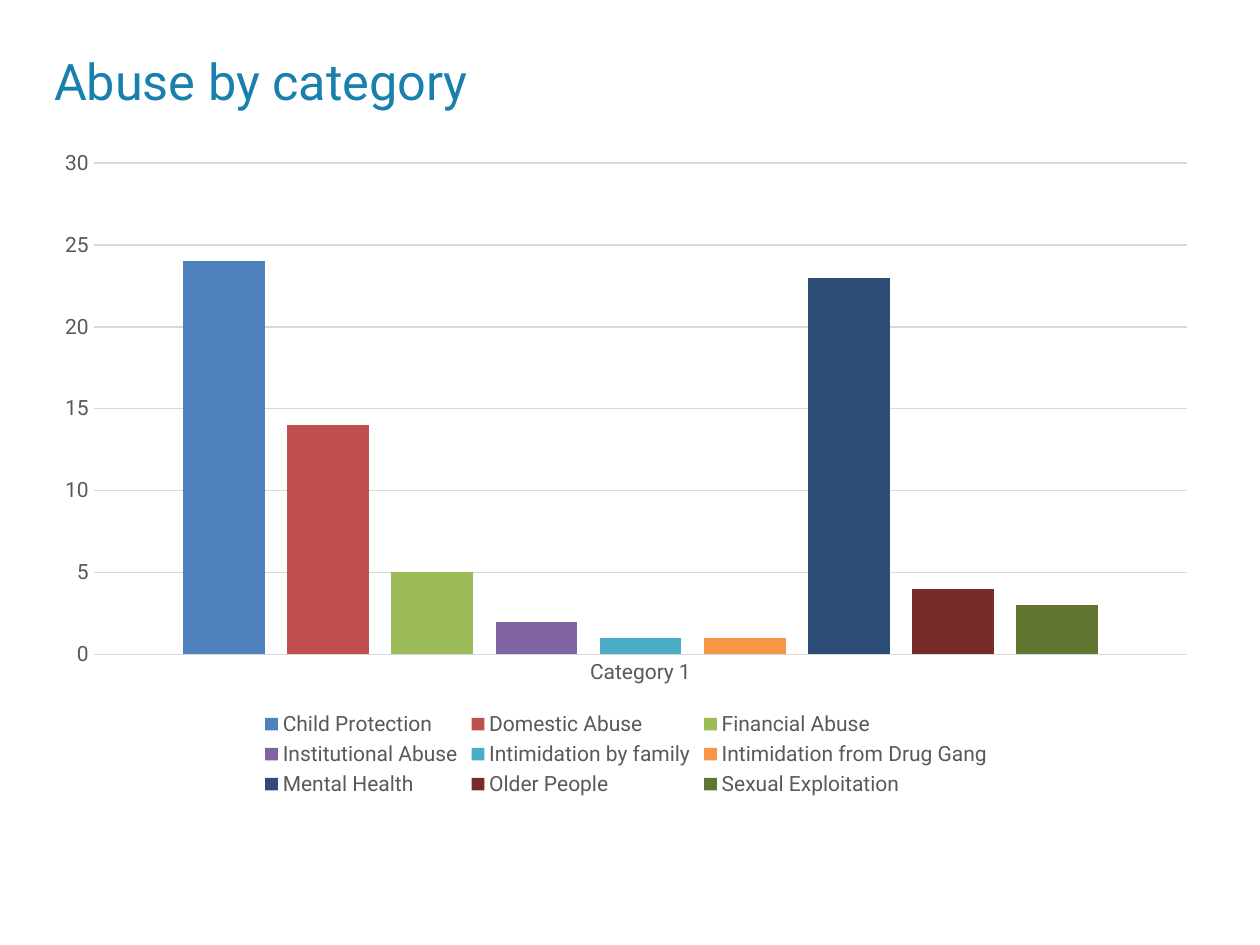
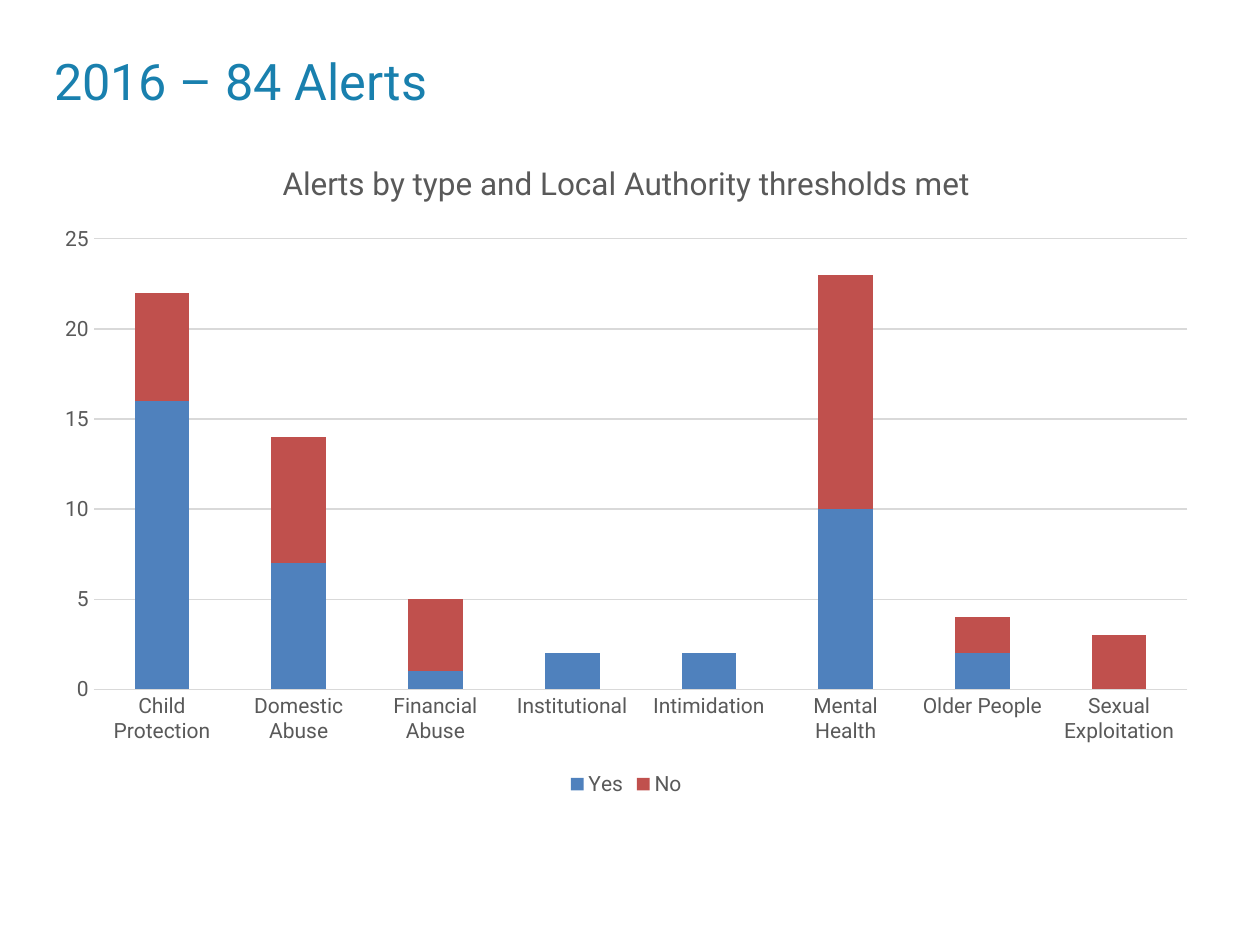
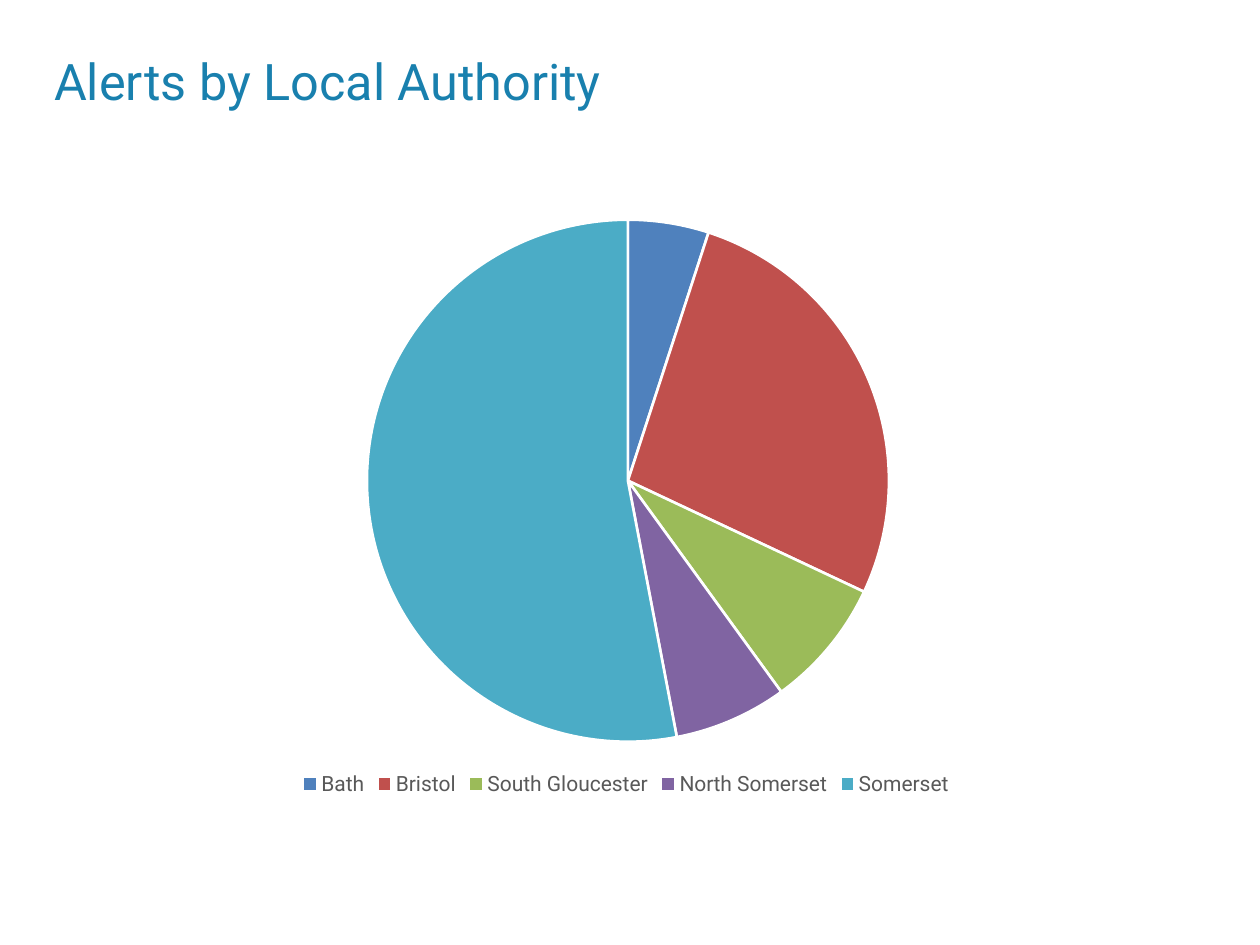
from dataclasses import dataclass

import lxml.etree
import pptx
import pptx.chart.data
import pptx.dml.color
import pptx.enum.chart
import pptx.enum.text
import pptx.oxml.ns
import pptx.util
from pptx.util import Cm, Pt

RGBColor = pptx.dml.color.RGBColor
ChartType = pptx.enum.chart.XL_CHART_TYPE

FONT = "Roboto"
WHITE = RGBColor(0xFF, 0xFF, 0xFF)
TITLE_BLUE = RGBColor(0x19, 0x80, 0xAE)
LABEL_GREY = RGBColor(0x59, 0x59, 0x59)
GRID_GREY = RGBColor(0xD9, 0xD9, 0xD9)
PALETTE = [
    RGBColor(0x4F, 0x81, 0xBD),
    RGBColor(0xC0, 0x50, 0x4D),
    RGBColor(0x9B, 0xBB, 0x59),
    RGBColor(0x80, 0x64, 0xA2),
    RGBColor(0x4B, 0xAC, 0xC6),
    RGBColor(0xF7, 0x96, 0x46),
    RGBColor(0x2C, 0x4D, 0x75),
    RGBColor(0x77, 0x2C, 0x2A),
    RGBColor(0x5F, 0x75, 0x30),
]
PIE_LAYOUT = {"x": 0.018, "y": 0.124, "w": 0.967, "h": 0.786}


@dataclass
class ChartSlide:
    """Title and chart of one slide."""

    title: str
    kind: ChartType
    categories: list[str]
    series: dict[str, list[int | None]]
    chart_title: str = ""
    gap: int = 150
    overlap: int = 0
    maximum: int = 0


SLIDES = [
    ChartSlide(
        "Abuse by category",
        ChartType.COLUMN_CLUSTERED,
        ["Category 1"],
        {
            "Child Protection": [24],
            "Domestic Abuse": [14],
            "Financial Abuse": [5],
            "Institutional Abuse": [2],
            "Intimidation by family": [1],
            "Intimidation from Drug Gang": [1],
            "Mental Health": [23],
            "Older People": [4],
            "Sexual Exploitation": [3],
        },
        gap=219,
        overlap=-27,
        maximum=30,
    ),
    ChartSlide(
        "2016 – 84 Alerts",
        ChartType.COLUMN_STACKED,
        ["Child Protection", "Domestic Abuse", "Financial Abuse", "Institutional",
         "Intimidation", "Mental Health", "Older People", "Sexual Exploitation"],
        {
            "Yes": [16, 7, 1, 2, 2, 10, 2, None],
            "No": [6, 7, 4, None, None, 13, 2, 3],
        },
        chart_title="Alerts by type and Local Authority thresholds met",
        overlap=100,
        maximum=25,
    ),
    ChartSlide(
        "Alerts by Local Authority",
        ChartType.PIE,
        ["Bath", "Bristol", "South Gloucester", "North Somerset", "Somerset"],
        {"Series 1": [5, 27, 8, 7, 53]},
    ),
]


def style_font(font, size: float, color: RGBColor) -> None:
    """Apply the shared typeface with a size and a colour."""
    font.name = FONT
    font.size = Pt(size)
    font.bold = False
    font.color.rgb = color


def style_line(line) -> None:
    """Draw an axis line or gridline in thin grey."""
    line.color.rgb = GRID_GREY
    line.width = Pt(0.75)


def add_title(s, text: str) -> None:
    """Add the slide title."""
    tf = s.shapes.add_textbox(Cm(0.84), Cm(0.84), Cm(22.86), Cm(1.57)).text_frame
    tf.word_wrap = True
    tf.vertical_anchor = pptx.enum.text.MSO_ANCHOR.MIDDLE
    tf.text = text
    style_font(tf.paragraphs[0].runs[0].font, 28.8, TITLE_BLUE)


def style_columns(chart, item: ChartSlide) -> None:
    """Format the axes, gaps and series of a column chart."""
    plot = chart.plots[0]
    plot.vary_by_categories = False
    plot.gap_width = item.gap
    plot.overlap = item.overlap
    for axis in (chart.category_axis, chart.value_axis):
        axis.major_tick_mark = pptx.enum.chart.XL_TICK_MARK.NONE
        style_font(axis.tick_labels.font, 12, LABEL_GREY)
    style_line(chart.category_axis.format.line)
    value_axis = chart.value_axis
    value_axis.minimum_scale = 0
    value_axis.maximum_scale = item.maximum
    value_axis.major_unit = 5
    value_axis.format.line.fill.background()
    style_line(value_axis.major_gridlines.format.line)
    for series, color in zip(plot.series, PALETTE):
        series.invert_if_negative = False
        series.format.fill.solid()
        series.format.fill.fore_color.rgb = color


def style_pie(chart, item: ChartSlide) -> None:
    """Colour the slices and place the pie."""
    plot = chart.plots[0]
    plot.vary_by_categories = True
    for i, color in enumerate(PALETTE[:len(item.categories)]):
        fmt = plot.series[0].points[i].format
        fmt.fill.solid()
        fmt.fill.fore_color.rgb = color
        fmt.line.color.rgb = WHITE
        fmt.line.width = Pt(1.5)
    qn = pptx.oxml.ns.qn
    area = chart.element.find(".//" + qn("c:plotArea"))
    layout = area.find(qn("c:layout"))
    if layout is None:
        layout = lxml.etree.Element(qn("c:layout"))
        area.insert(0, layout)
    manual = lxml.etree.SubElement(layout, qn("c:manualLayout"))
    settings = {"layoutTarget": "inner", "xMode": "edge", "yMode": "edge", **PIE_LAYOUT}
    for name, value in settings.items():
        lxml.etree.SubElement(manual, qn(f"c:{name}"), val=str(value))


def add_chart(s, item: ChartSlide) -> None:
    """Add the chart with its title and legend."""
    data = pptx.chart.data.CategoryChartData()
    data.categories = item.categories
    for name, values in item.series.items():
        data.add_series(name, values)
    chart = s.shapes.add_chart(
        item.kind, Cm(0.84), Cm(2.77), Cm(23.57), Cm(13.39), data
    ).chart
    style_font(chart.font, 10, RGBColor(0, 0, 0))
    chart.has_title = bool(item.chart_title)
    if item.chart_title:
        tf = chart.chart_title.text_frame
        tf.text = item.chart_title
        style_font(tf.paragraphs[0].runs[0].font, 18, LABEL_GREY)
        chart.chart_title.include_in_layout = False
    chart.has_legend = True
    chart.legend.position = pptx.enum.chart.XL_LEGEND_POSITION.BOTTOM
    chart.legend.include_in_layout = False
    style_font(chart.legend.font, 12, LABEL_GREY)
    if item.kind == ChartType.PIE:
        style_pie(chart, item)
    else:
        style_columns(chart, item)


def main() -> None:
    """Build and save the presentation."""
    prs = pptx.Presentation()
    prs.slide_width, prs.slide_height = Cm(25.4), Cm(19.05)
    for item in SLIDES:
        s = prs.slides.add_slide(prs.slide_layouts[6])
        add_chart(s, item)
        add_title(s, item.title)
    prs.save("out.pptx")


if __name__ == "__main__":
    main()
